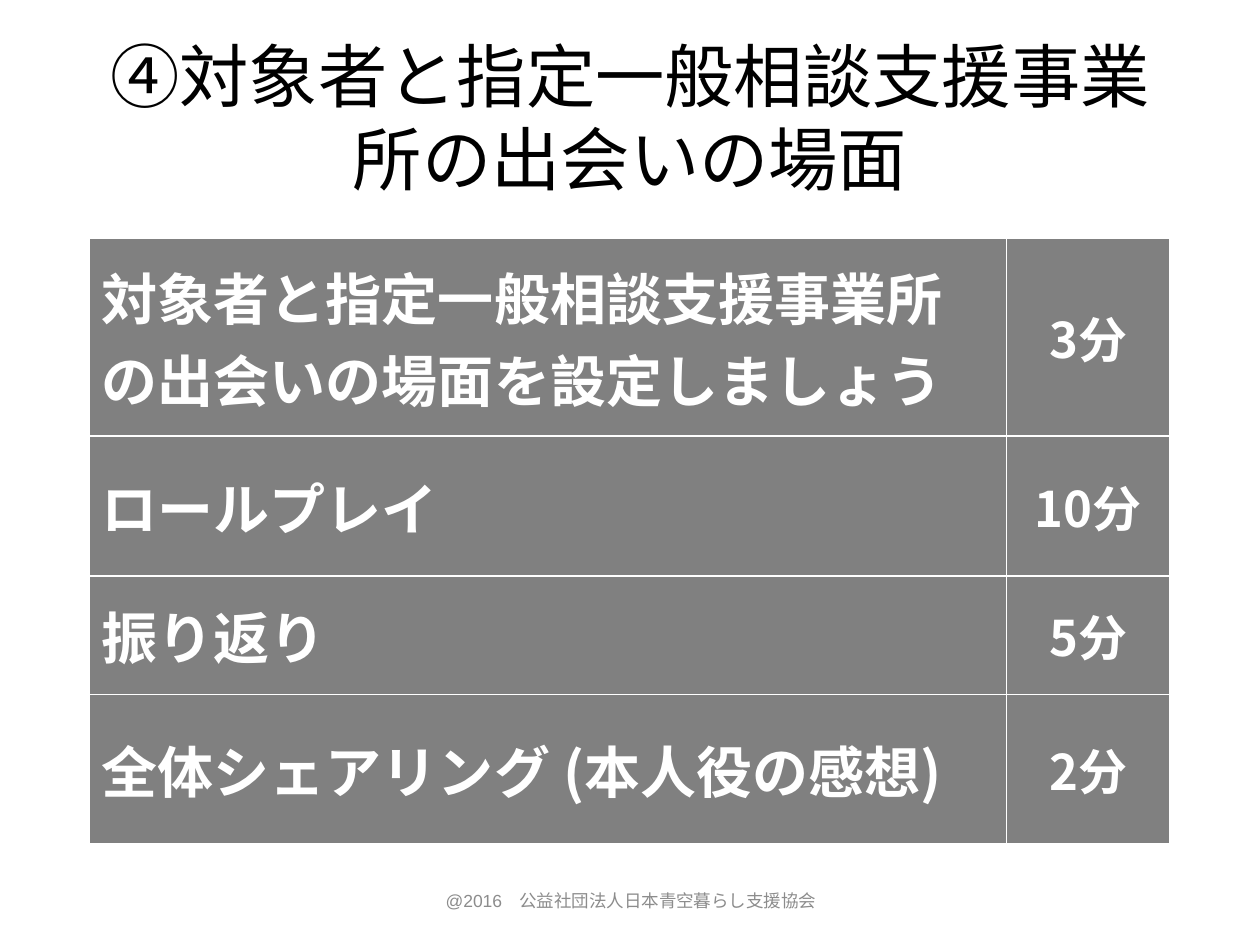
from lxml import etree
from pptx import Presentation
from pptx import util as u
from pptx.dml import color
from pptx.enum import text
from pptx.oxml import ns

COLORS = {"title": "000000", "cell": "808080", "cell_text": "FFFFFF",
          "border": "FFFFFF", "footer": "8C8C8C"}
TABLE_FONT = "Noto Sans CJK JP"
STEPS = [
    ("対象者と指定一般相談支援事業所の出会いの場面を設定しましょう", "3分", 3.99),
    ("ロールプレイ", "10分", 2.82),
    ("振り返り", "5分", 2.39),
    ("全体シェアリング (本人役の感想)", "2分", 3),
]


def rgb(name):
    """Return the named colour."""
    return color.RGBColor.from_string(COLORS[name])


def format_paragraph(paragraph, size, font_name, color_name, alignment, bold=False):
    """Set the font and alignment of a paragraph."""
    paragraph.alignment = alignment
    font = paragraph.font
    font.size, font.name, font.bold = u.Pt(size), font_name, bold
    font.color.rgb = rgb(color_name)


def set_east_asian_font(paragraph, font_name):
    """Set the East Asian typeface of a paragraph."""
    properties = paragraph._p.get_or_add_pPr().find(ns.qn("a:defRPr"))
    etree.SubElement(properties, ns.qn("a:ea"), typeface=font_name)


def set_borders(cell):
    """Draw a one-point line on each side of a cell."""
    properties = cell._tc.get_or_add_tcPr()
    for index, side in enumerate(("lnL", "lnR", "lnT", "lnB")):
        line = etree.Element(ns.qn(f"a:{side}"), w=str(u.Pt(1)))
        fill = etree.SubElement(line, ns.qn("a:solidFill"))
        etree.SubElement(fill, ns.qn("a:srgbClr"), val=COLORS["border"])
        properties.insert(index, line)


def add_title(slide, left, top, width, height):
    """Place and format the slide title."""
    title = slide.shapes.title
    title.left, title.top, title.width, title.height = map(u.Cm, (left, top, width, height))
    frame = title.text_frame
    frame.text = "④対象者と指定一般相談支援事業所の出会いの場面"
    frame.auto_size = text.MSO_AUTO_SIZE.NONE
    frame.vertical_anchor = text.MSO_ANCHOR.MIDDLE
    format_paragraph(frame.paragraphs[0], 39.6, "Calibri", "title", text.PP_ALIGN.CENTER)


def fill_cell(cell, wording, size, alignment):
    """Write and format one table cell."""
    cell.text = wording
    cell.vertical_anchor = text.MSO_ANCHOR.MIDDLE
    cell.fill.solid()
    cell.fill.fore_color.rgb = rgb("cell")
    set_borders(cell)
    paragraph = cell.text_frame.paragraphs[0]
    format_paragraph(paragraph, size, TABLE_FONT, "cell_text", alignment, bold=True)
    set_east_asian_font(paragraph, TABLE_FONT)


def add_schedule(slide, left, top, width, time_width=3.3):
    """Add the table of steps and their durations."""
    height = sum(row_height for *_, row_height in STEPS)
    table = slide.shapes.add_table(
        len(STEPS), 2, *map(u.Cm, (left, top, width, height))).table
    table.first_row = table.horz_banding = False
    table.columns[0].width = u.Cm(width - time_width)
    table.columns[1].width = u.Cm(time_width)
    for row, (step, duration, row_height) in zip(table.rows, STEPS):
        row.height = u.Cm(row_height)
        fill_cell(row.cells[0], step, 32, text.PP_ALIGN.LEFT)
        fill_cell(row.cells[1], duration, 28, text.PP_ALIGN.CENTER)


def add_footer(slide, left, top, width, height):
    """Add the centred credit line at the foot of the slide."""
    frame = slide.shapes.add_textbox(*map(u.Cm, (left, top, width, height))).text_frame
    frame.word_wrap = True
    frame.vertical_anchor = text.MSO_ANCHOR.MIDDLE
    frame.text = "@2016　公益社団法人日本青空暮らし支援協会"
    format_paragraph(frame.paragraphs[0], 10, "Arial", "footer", text.PP_ALIGN.CENTER)


def main():
    """Build and save the presentation."""
    presentation = Presentation()
    presentation.slide_width, presentation.slide_height = u.Cm(25.4), u.Cm(19.05)
    slide = presentation.slides.add_slide(presentation.slide_layouts[5])
    add_title(slide, 1.27, 0.76, 22.86, 3.18)
    add_schedule(slide, 1.8, 4.8, 21.79)
    add_footer(slide, 8.69, 17.65, 8.05, 1.02)
    presentation.save("out.pptx")


if __name__ == "__main__":
    main()
